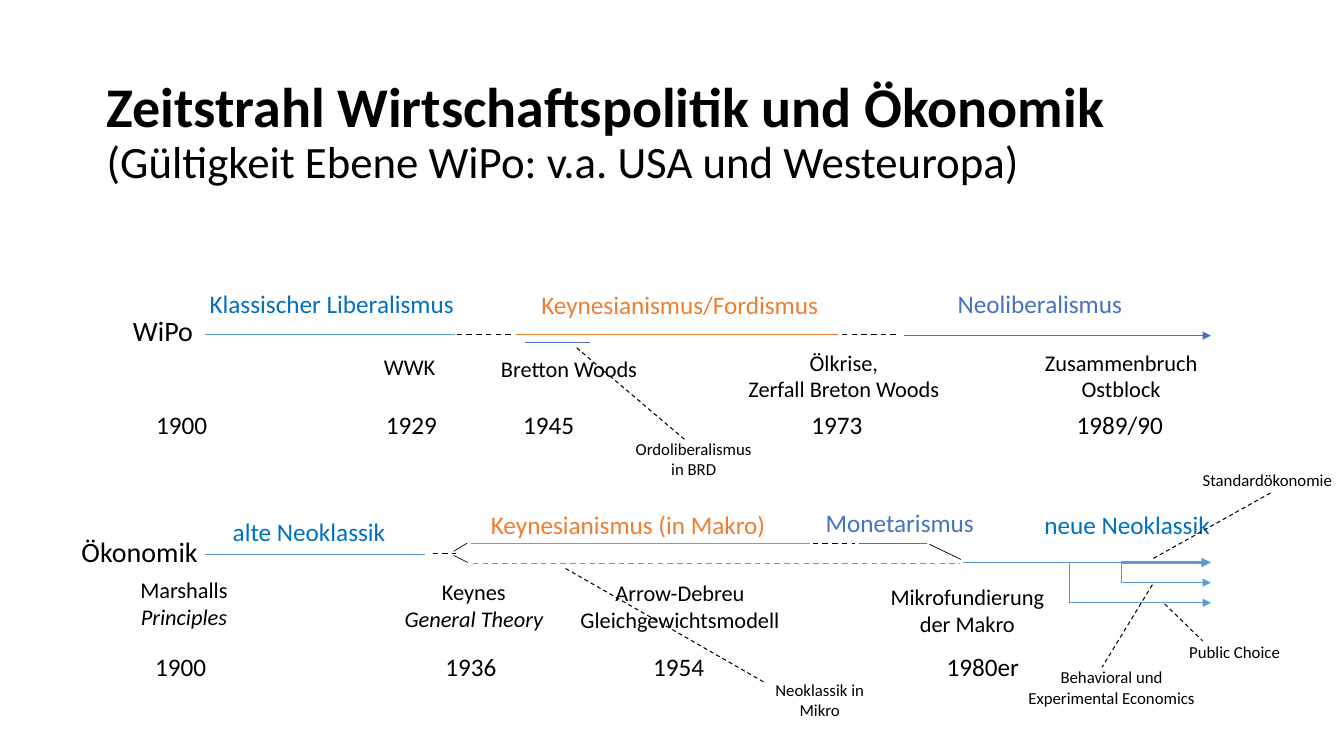
from lxml import etree
from pptx import Presentation
from pptx.dml.color import RGBColor
from pptx.enum.dml import MSO_LINE
from pptx.enum.shapes import MSO_CONNECTOR
from pptx.enum.text import MSO_ANCHOR, PP_ALIGN
from pptx.oxml.ns import qn
from pptx.util import Inches, Pt

STRAIGHT = MSO_CONNECTOR.STRAIGHT
DASH = MSO_LINE.DASH
LEFT, CENTER = PP_ALIGN.LEFT, PP_ALIGN.CENTER
MIDDLE = MSO_ANCHOR.MIDDLE

THEME = {
    "font": "Calibri",
    "black": RGBColor.from_string("000000"),
    "blue": RGBColor.from_string("0070C0"),
    "orange": RGBColor.from_string("ED7D31"),
    "indigo": RGBColor.from_string("4472C4"),
    "sky": RGBColor.from_string("5B9BD5"),
    "title": 40, "subtitle": 32, "track": 20, "era": 18, "event": 16, "note": 12,
}

prs = Presentation()
prs.slide_width, prs.slide_height = Inches(13.33), Inches(7.5)
COL = prs.slide_width / 133.3
ROW = prs.slide_height / 75
s = prs.slides.add_slide(prs.slide_layouts[6])


def add_text(text, x, y, w, h, size, color="black", align=LEFT):
    tf = s.shapes.add_textbox(int(x * COL), int(y * ROW), int(w * COL), int(h * ROW)).text_frame
    tf.word_wrap = True
    tf.text = text
    for p in tf.paragraphs:
        p.alignment = align
        for r in p.runs:
            r.font.name = THEME["font"]
            r.font.size = Pt(THEME[size])
            r.font.color.rgb = THEME[color]
    return tf


def add_line(x1, y1, x2, y2, color, width, dashed=False, arrow=False):
    c = s.shapes.add_connector(STRAIGHT, int(x1 * COL), int(y1 * ROW), int(x2 * COL), int(y2 * ROW))
    c.line.color.rgb = THEME[color]
    c.line.width = Pt(width)
    if dashed:
        c.line.dash_style = DASH
    if arrow:
        etree.SubElement(c.line._get_or_add_ln(), qn("a:tailEnd"), type="triangle")
    etree.SubElement(c._element.spPr, qn("a:effectLst"))


tf = add_text("Zeitstrahl Wirtschaftspolitik und Ökonomik\v(Gültigkeit Ebene WiPo: v.a. USA und Westeuropa)",
              9.6, 6.5, 115, 13.5, "title")
tf.vertical_anchor = MIDDLE
p = tf.paragraphs[0]
p.line_spacing = 0.9
p.runs[0].font.bold = True
p.runs[1].font.size = Pt(THEME["subtitle"])

for track, x, y in [("WiPo", 12.2, 30.6), ("Ökonomik", 7.1, 52.5)]:
    add_text(track, x, y, 16, 4.3, "track")

ERAS = [
    ("Klassischer Liberalismus", 19.8, 28.1, 28, "blue"),
    ("Keynesianismus/Fordismus", 52.7, 28.2, 29.9, "orange"),
    ("Neoliberalismus", 94, 28.1, 23.7, "indigo"),
    ("alte Neoklassik", 22.1, 50.7, 18.9, "blue"),
    ("Keynesianismus (in Makro)", 47.7, 50, 31.8, "orange"),
    ("Monetarismus", 80.9, 49.8, 17.7, "indigo"),
    ("neue Neoklassik", 102.6, 50, 18.9, "blue"),
]
for era, x, y, w, color in ERAS:
    add_text(era, x, y, w, 4, "era", color)

YEARS = {
    40.1: [("1900", 14.5), ("1929", 37.3), ("1945", 50.9), ("1973", 79.5), ("1989/90", 105.8)],
    64.1: [("1900", 14.4), ("1936", 43.2), ("1954", 63.8), ("1980er", 92.9)],
}
for y, years in YEARS.items():
    for year, x in years:
        add_text(year, x, y, 11, 4, "era")

for event, x, y, w in [("WWK", 37.1, 34.5, 8), ("Bretton Woods", 48.7, 34.7, 20.2)]:
    add_text(event, x, y, w, 3.7, "event")

EVENTS = [
    ("Ölkrise,\nZerfall Breton Woods", 72.2, 34.1, 23),
    ("Zusammenbruch Ostblock", 101.1, 34.1, 20.2),
    ("Arrow-Debreu Gleichgewichtsmodell", 56.3, 57, 22.3),
    ("Mikrofundierung der Makro", 86.6, 57.4, 18.7),
]
for event, x, y, w in EVENTS:
    add_text(event, x, y, w, 6.4, "event", align=CENTER)

WORKS = [("Marshalls\nPrinciples", 12.4, 56.7, 11.7), ("Keynes\nGeneral Theory", 38.7, 56.9, 16.6)]
for work, x, y, w in WORKS:
    tf = add_text(work, x, y, w, 6.4, "event", align=CENTER)
    tf.paragraphs[1].runs[0].font.italic = True

NOTES = [
    ("Ordoliberalismus in BRD", 61.4, 43, 14.8, 5),
    ("Neoklassik in Mikro", 73.9, 66.9, 14.8, 5),
    ("Standardökonomie", 118.2, 46.1, 15, 3),
    ("Behavioral und Experimental Economics", 100.4, 65.7, 19.7, 5),
    ("Public Choice", 116.7, 63.2, 11.5, 3),
]
for note, x, y, w, h in NOTES:
    add_text(note, x, y, w, h, "note", align=CENTER)

SPANS = [
    (33.2, 20.3, 45.1, "sky", False),
    (33.2, 45.3, 50.8, "black", True),
    (33.2, 51.2, 83.1, "orange", False),
    (33.2, 83.5, 89, "black", True),
    (34, 52.1, 58.5, "indigo", False),
    (55, 20.3, 42.2, "sky", False),
    (54.9, 42.9, 45.2, "black", True),
    (53.9, 46.7, 80.3, "orange", False),
    (53.9, 80.6, 84.8, "black", True),
    (53.9, 85.2, 91.9, "indigo", False),
    (55.9, 46.9, 95.2, "sky", True),
    (55.8, 95.5, 111.2, "sky", False),
]
for y, x1, x2, color, dashed in SPANS:
    add_line(x1, y, x2, y, color, 1, dashed)

ARROW_END = 120.1
ARROWS = [
    (89.7, 33.3, "indigo", 1),
    (111.2, 55.8, "sky", 2.25),
    (111.2, 57.8, "sky", 0.5),
    (106.1, 59.8, "sky", 0.5),
]
for x, y, color, width in ARROWS:
    add_line(x, y, ARROW_END, y, color, width, arrow=True)

for x, y in [(111.2, 57.8), (106.1, 59.8)]:
    add_line(x, 55.8, x, y, "sky", 0.5)

FORKS = [(45, 54.7, 46.3, 53.9), (45, 55.1, 46.4, 55.8), (92.2, 54, 95.3, 55.5)]
for ends in FORKS:
    add_line(*ends, "black", 0.5)

POINTERS = [
    (57.2, 34.5, 67.9, 43.6),
    (56.1, 56.4, 76, 67.8),
    (114.4, 55.4, 126.2, 48.8),
    (114.3, 58, 109.3, 66.2),
    (115.5, 59.9, 119.3, 63.6),
]
for ends in POINTERS:
    add_line(*ends, "black", 0.75, dashed=True)

prs.save("out.pptx")
